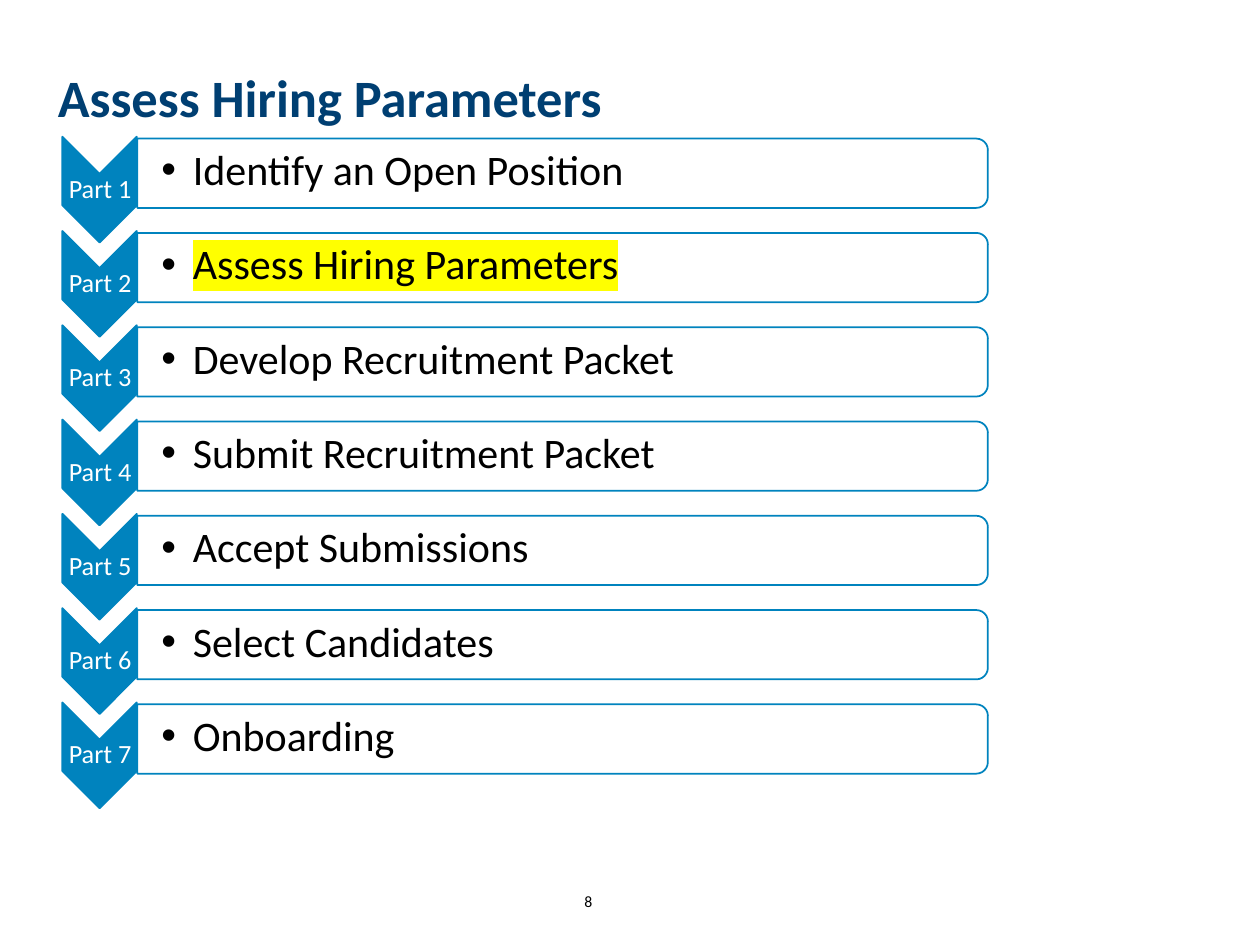
"""Build the slide that lists the seven parts of hiring."""
import lxml.etree
import pptx
import pptx.dml.color
import pptx.enum.shapes
import pptx.enum.text
import pptx.oxml.ns
import pptx.util

Inches = pptx.util.Inches
RGBColor = pptx.dml.color.RGBColor
Shape = pptx.enum.shapes.MSO_SHAPE
Align = pptx.enum.text.PP_ALIGN
qn = pptx.oxml.ns.qn

NAVY = RGBColor(0x00, 0x3F, 0x72)
BLUE = RGBColor(0x00, 0x83, 0xBE)
WHITE = RGBColor(0xFF, 0xFF, 0xFF)
BLACK = RGBColor(0x00, 0x00, 0x00)
YELLOW = RGBColor(0xFF, 0xFF, 0x00)

TITLE = "Assess Hiring Parameters"
PARTS = [
    "Identify an Open Position",
    TITLE,
    "Develop Recruitment Packet",
    "Submit Recruitment Packet",
    "Accept Submissions",
    "Select Candidates",
    "Onboarding",
]
STEP = 4.49 / 6


def style(para, size, color, bold=False):
    """Set the font of a paragraph."""
    font = para.font
    font.name = "Calibri"
    font.size = pptx.util.Pt(size)
    font.bold = bold
    font.color.rgb = color


def add_text(slide, box, text, pads=(0.1, 0.05, 0.1, 0.05)):
    """Add a text box and return its paragraph."""
    frame = slide.shapes.add_textbox(*map(Inches, box)).text_frame
    frame.word_wrap = True
    frame.vertical_anchor = pptx.enum.text.MSO_ANCHOR.MIDDLE
    frame.margin_left, frame.margin_top, frame.margin_right, frame.margin_bottom = map(Inches, pads)
    para = frame.paragraphs[0]
    para.add_run().text = text
    return para


def add_turned(slide, kind, box, fill):
    """Add a shape turned by a quarter."""
    shape = slide.shapes.add_shape(kind, *map(Inches, box))
    shape.rotation = 90
    shape.shadow.inherit = False
    shape.fill.solid()
    shape.fill.fore_color.rgb = fill
    shape.line.color.rgb = BLUE
    shape.line.width = pptx.util.Pt(1)
    return shape


def add_bullet(para):
    """Give a paragraph a hanging bullet."""
    props = para._p.get_or_add_pPr()
    props.set("marL", str(Inches(0.25)))
    props.set("indent", str(Inches(-0.25)))
    lxml.etree.SubElement(props, qn("a:buFont"), typeface="Arial")
    lxml.etree.SubElement(props, qn("a:buChar"), char="•")


def mark(run):
    """Highlight a run in yellow."""
    light = lxml.etree.SubElement(run._r.get_or_add_rPr(), qn("a:highlight"))
    lxml.etree.SubElement(light, qn("a:srgbClr"), val=str(YELLOW))


def add_part(slide, index, text):
    """Add one row with its chevron, label, bar and bullet."""
    down = index * STEP
    add_turned(slide, Shape.CHEVRON, (0.37, 1.21 + down, 0.84, 0.59), BLUE)
    label = add_text(slide, (0.5, 1.38 + down, 0.59, 0.25), f"Part {index + 1}", [0.01] * 4)
    label.alignment = Align.CENTER
    label.line_spacing = 0.9
    style(label, 15, WHITE)

    bar = add_turned(slide, Shape.ROUND_2_SAME_RECTANGLE, (4.19, down - 2, 0.55, 6.75), WHITE)
    tint = bar.fill._xPr.find(".//" + qn("a:srgbClr"))
    lxml.etree.SubElement(tint, qn("a:alpha"), val="90000")
    item = add_text(slide, (1.09, 1.12 + down, 6.72, 0.49), text, (0.19, 0.02, 0.02, 0.02))
    item.line_spacing = 0.9
    add_bullet(item)
    style(item, 24, BLACK)
    if text == TITLE:
        mark(item.runs[0])


def add_title(slide):
    """Place and format the slide title."""
    title = slide.shapes.title
    title.left, title.top, title.width, title.height = map(Inches, (0.35, 0.37, 7.97, 0.85))
    frame = title.text_frame
    frame.text = TITLE
    frame.auto_size = pptx.enum.text.MSO_AUTO_SIZE.NONE
    frame.vertical_anchor = pptx.enum.text.MSO_ANCHOR.MIDDLE
    para = frame.paragraphs[0]
    para.alignment = Align.LEFT
    para.line_spacing = 0.9
    para._p.get_or_add_pPr().set("marL", str(Inches(0.01)))
    style(para, 30, NAVY, True)


def main():
    """Build and save the slide."""
    deck = pptx.Presentation()
    deck.slide_width, deck.slide_height = Inches(10), Inches(7.5)
    slide = deck.slides.add_slide(deck.slide_layouts[5])
    add_title(slide)
    number = add_text(slide, (4.39, 6.95, 0.56, 0.4), "8")
    number.alignment = Align.CENTER
    style(number, 9, BLACK)
    for index, text in enumerate(PARTS):
        add_part(slide, index, text)
    deck.save("out.pptx")


if __name__ == "__main__":
    main()
